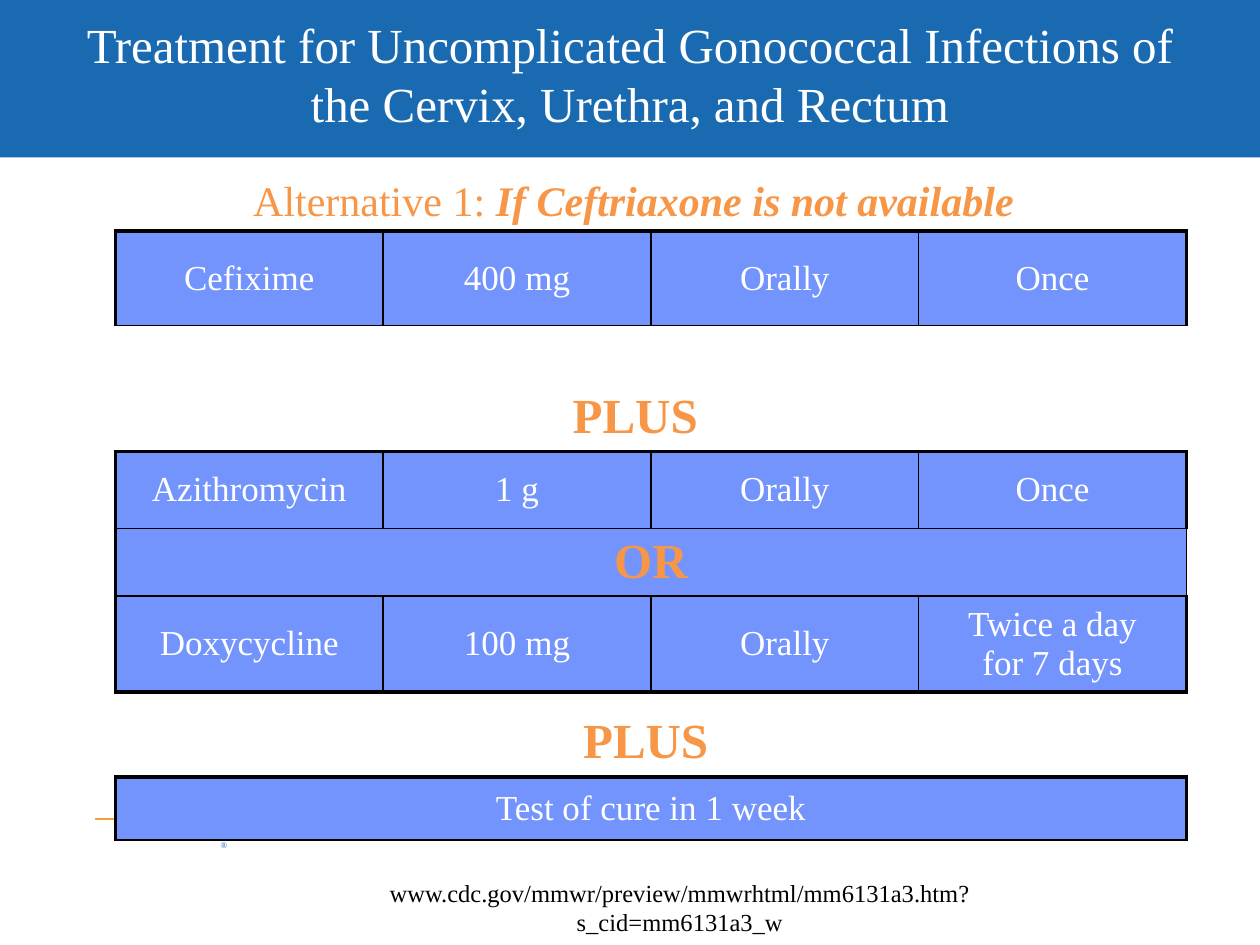
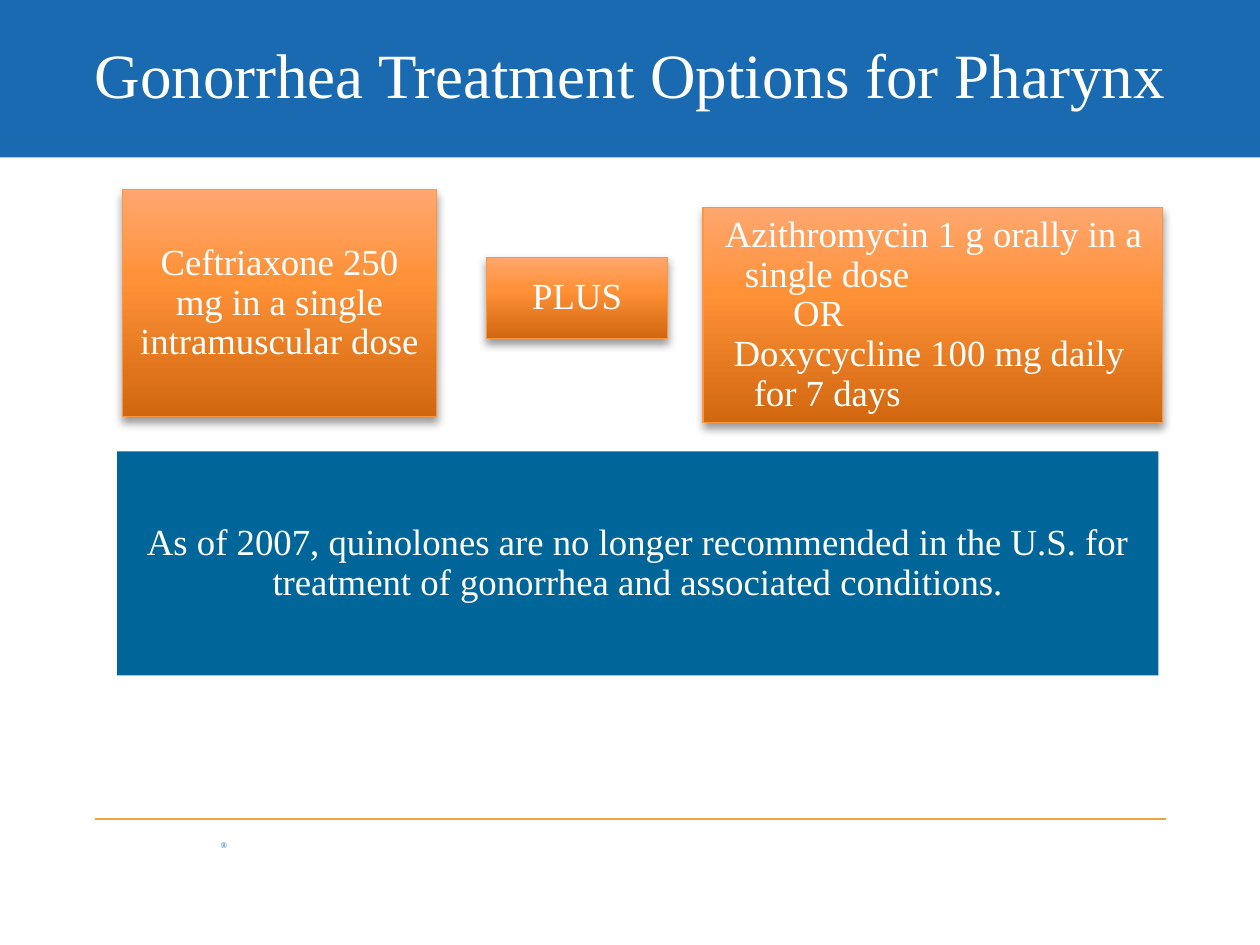
from dataclasses import dataclass

from lxml.etree import SubElement
from pptx import Presentation
from pptx.dml.color import RGBColor
from pptx.enum.shapes import MSO_CONNECTOR as CONN, MSO_SHAPE as SHAPE
from pptx.enum.text import MSO_ANCHOR as ANCHOR, PP_ALIGN as ALIGN
from pptx.oxml.ns import qn
from pptx.util import Pt

FONT = "Times New Roman"
BLUE, RULE, CELL, TEAL = "196AB0", "EEA33C", "7394FD", "006699"
ORANGE, WHITE, BLACK = "F79646", "FFFFFF", "000000"
GRADIENT = ((0, "D1670F"), (60, "FF9137"), (100, "FFA770"))
EDGE = "FF953E"
THICK, THIN = 2.25, 1
TABLE_LEFT, TABLE_WIDTH = 66, 612


@dataclass
class Box:
    """A rectangle in points."""
    left: float
    top: float
    width: float
    height: float

    def lengths(self) -> tuple:
        return Pt(self.left), Pt(self.top), Pt(self.width), Pt(self.height)


@dataclass
class Line:
    """A paragraph with its alignment and hanging indent."""
    text: str
    align: ALIGN = ALIGN.CENTER
    margin: float = 0
    indent: float = 0


@dataclass
class Card:
    box: Box
    lines: list
    fill: str = ""  # empty means the orange gradient


@dataclass
class Regimen:
    """A table; a row with a single text spans all columns."""
    top: float
    heights: list
    rows: list
    bottom: float = THIN


def rgb(color: str) -> RGBColor:
    return RGBColor.from_string(color)


def add_text(p, text: str, *, size: float, color: str = WHITE,
             bold: bool = False, italic: bool = False) -> None:
    for i, part in enumerate(text.split("\n")):
        if i:
            p.add_line_break()
        r = p.add_run()
        r.text = part
        f = r.font
        f.name, f.size, f.bold, f.italic = FONT, Pt(size), bold, italic
        f.color.rgb = rgb(color)


def add_label(slide, box: Box, *runs: tuple, align=ALIGN.CENTER, inset=None):
    """Add a one-paragraph text box; each run is (text, format)."""
    s = slide.shapes.add_textbox(*box.lengths())
    tf = s.text_frame
    tf.word_wrap = True
    if inset is not None:
        set_insets(tf, inset)
    p = tf.paragraphs[0]
    p.alignment = align
    for text, fmt in runs:
        add_text(p, text, **fmt)
    return s


def set_insets(tf, inset: float) -> None:
    tf.margin_left = tf.margin_right = Pt(inset)
    tf.margin_top = tf.margin_bottom = Pt(inset)


def add_rect(slide, box: Box, fill: str = ""):
    s = slide.shapes.add_shape(SHAPE.RECTANGLE, *box.lengths())
    s.shadow.inherit = False
    if fill:
        s.fill.solid()
        s.fill.fore_color.rgb = rgb(fill)
        s.line.fill.background()
    return s


def add_color(parent, color: str):
    return SubElement(parent, qn("a:srgbClr"), val=color)


def add_glow(s) -> None:
    """Give a rectangle the orange gradient, thin edge and soft shadow."""
    s.fill.gradient()
    s.fill.gradient_angle = 90
    spPr = s._element.spPr
    stops = spPr.find(qn("a:gradFill")).find(qn("a:gsLst"))
    for stop in list(stops):
        stops.remove(stop)
    for pos, color in GRADIENT:
        add_color(SubElement(stops, qn("a:gs"), pos=str(pos * 1000)), color)
    s.line.color.rgb = rgb(EDGE)
    s.line.width = Pt(0.75)
    shadow = SubElement(spPr.find(qn("a:effectLst")), qn("a:outerShdw"),
                        blurRad=str(Pt(5.2)), dist=str(Pt(3)),
                        dir="5400000", rotWithShape="0")
    SubElement(add_color(shadow, BLACK), qn("a:alpha"), val="40000")


def add_card(slide, card: Card) -> None:
    s = add_rect(slide, card.box, card.fill)
    if not card.fill:
        add_glow(s)
    tf = s.text_frame
    tf.word_wrap = True
    tf.vertical_anchor = ANCHOR.MIDDLE
    set_insets(tf, 6.5)
    for i, line in enumerate(card.lines):
        p = tf.add_paragraph() if i else tf.paragraphs[0]
        p.alignment, p.line_spacing = line.align, 0.9
        pPr = p._p.get_or_add_pPr()
        pPr.set("marL", str(Pt(line.margin)))
        pPr.set("indent", str(Pt(line.indent)))
        add_text(p, line.text, size=21)


def set_borders(cell, **widths: float) -> None:
    tcPr = cell._tc.get_or_add_tcPr()
    for i, (side, width) in enumerate(widths.items()):
        ln = SubElement(tcPr, qn(f"a:ln{side}"), w=str(Pt(width)))
        add_color(SubElement(ln, qn("a:solidFill")), BLACK)
        tcPr.insert(i, ln)  # borders come before the fill


def add_regimen(slide, reg: Regimen) -> None:
    n_rows, n_cols = len(reg.rows), max(map(len, reg.rows))
    box = Box(TABLE_LEFT, reg.top, TABLE_WIDTH, sum(reg.heights))
    table = slide.shapes.add_table(n_rows, n_cols, *box.lengths()).table
    table.first_row = table.horz_banding = False
    for i, (row, height) in enumerate(zip(reg.rows, reg.heights)):
        table.rows[i].height = Pt(height)
        spans = len(row) < n_cols
        for j in range(n_cols):
            cell = table.cell(i, j)
            cell.fill.solid()
            cell.fill.fore_color.rgb = rgb(CELL)
            cell.vertical_anchor = ANCHOR.MIDDLE
            set_borders(cell,
                        L=THIN if j else THICK,
                        R=THIN if j < n_cols - 1 else THICK,
                        T=THIN if i else THICK,
                        B=THIN if i < n_rows - 1 else reg.bottom)
        if spans:
            table.cell(i, 0).merge(table.cell(i, n_cols - 1))
        fmt = dict(size=28, color=ORANGE, bold=True) if spans else dict(size=20)
        for j, text in enumerate(row):
            p = table.cell(i, j).text_frame.paragraphs[0]
            p.alignment = ALIGN.CENTER
            add_text(p, text, **fmt)


def dress_layout(layout, slide) -> None:
    """Put the band, footer rule and mark behind every slide's content."""
    band = add_rect(slide, Box(0, 0, 720, 90), BLUE)
    mark = add_label(slide, Box(126, 480, 18, 6),
                     ("®", dict(size=5, color=BLUE)), align=ALIGN.LEFT, inset=0)
    rule = slide.shapes.add_connector(CONN.STRAIGHT, Pt(54), Pt(468), Pt(666), Pt(468))
    rule.line.color.rgb = rgb(RULE)
    rule.line.width = Pt(0.75)
    SubElement(rule._element.spPr, qn("a:effectLst"))
    for i, s in enumerate((band, mark, rule)):
        layout.shapes.element.insert(2 + i, s._element)
    title = layout.placeholders[0]
    title.left, title.top, title.width, title.height = Box(36, 6, 648, 72).lengths()
    title.text_frame.vertical_anchor = ANCHOR.MIDDLE


def set_title(slide, text: str, size: float) -> None:
    p = slide.shapes.title.text_frame.paragraphs[0]
    p.alignment = ALIGN.CENTER
    add_text(p, text, size=size)


def build_alternative(slide) -> None:
    set_title(slide, "Treatment for Uncomplicated Gonococcal Infections of "
                     "the Cervix, Urethra, and Rectum", 28)
    regimens = [
        Regimen(132, [54], [["Cefixime", "400 mg", "Orally", "Once"]]),
        Regimen(258, [44, 38.5, 55],
                [["Azithromycin", "1 g", "Orally", "Once"],
                 ["OR"],
                 ["Doxycycline", "100 mg", "Orally", "Twice a day\nfor 7 days"]],
                bottom=THICK),
        Regimen(444, [36], [["Test of cure in 1 week"]]),
    ]
    for reg in regimens:
        add_regimen(slide, reg)

    # Labels between the tables
    head = dict(size=24, color=ORANGE)
    add_label(slide, Box(70.5, 96, 583, 36), ("Alternative 1: ", head),
              ("If Ceftriaxone is not available", dict(head, bold=True, italic=True)))
    for left, top in ((204, 216), (210, 402)):
        add_label(slide, Box(left, top, 318, 41),
                  ("PLUS", dict(size=28, color=ORANGE, bold=True)))

    # Source address
    add_label(slide, Box(161.5, 498, 454, 24.5),
              ("www.cdc.gov/mmwr/preview/mmwrhtml/mm6131a3.htm?s_cid=mm6131a3_w",
               dict(size=14, color=BLACK)))


def build_pharynx(slide) -> None:
    set_title(slide, "Gonorrhea Treatment Options for Pharynx", 36)
    cards = [
        Card(Box(70, 108.5, 179.5, 129.5),
             [Line("Ceftriaxone 250 mg in a single intramuscular dose")]),
        Card(Box(278, 147, 103.5, 46.5), [Line("PLUS")]),
        Card(Box(401.75, 118.5, 262.5, 123),
             [Line("Azithromycin 1 g orally in a single dose", ALIGN.LEFT, 17.5, -11.5),
              Line("OR", ALIGN.LEFT, 45),
              Line("Doxycycline 100 mg daily for 7 days", ALIGN.LEFT, 22.5, -11.5)]),
        Card(Box(67, 258, 595, 128),
             [Line("As of 2007, quinolones are no longer recommended in the U.S. "
                   "for treatment of gonorrhea and associated conditions.")], TEAL),
    ]
    for card in cards:
        add_card(slide, card)


def main() -> None:
    prs = Presentation()
    prs.slide_width, prs.slide_height = Pt(720), Pt(540)
    layout = prs.slide_layouts.get_by_name("Title Only")
    slides = [prs.slides.add_slide(layout) for _ in range(2)]
    dress_layout(layout, slides[0])
    build_alternative(slides[0])
    build_pharynx(slides[1])
    prs.save("out.pptx")


if __name__ == "__main__":
    main()
